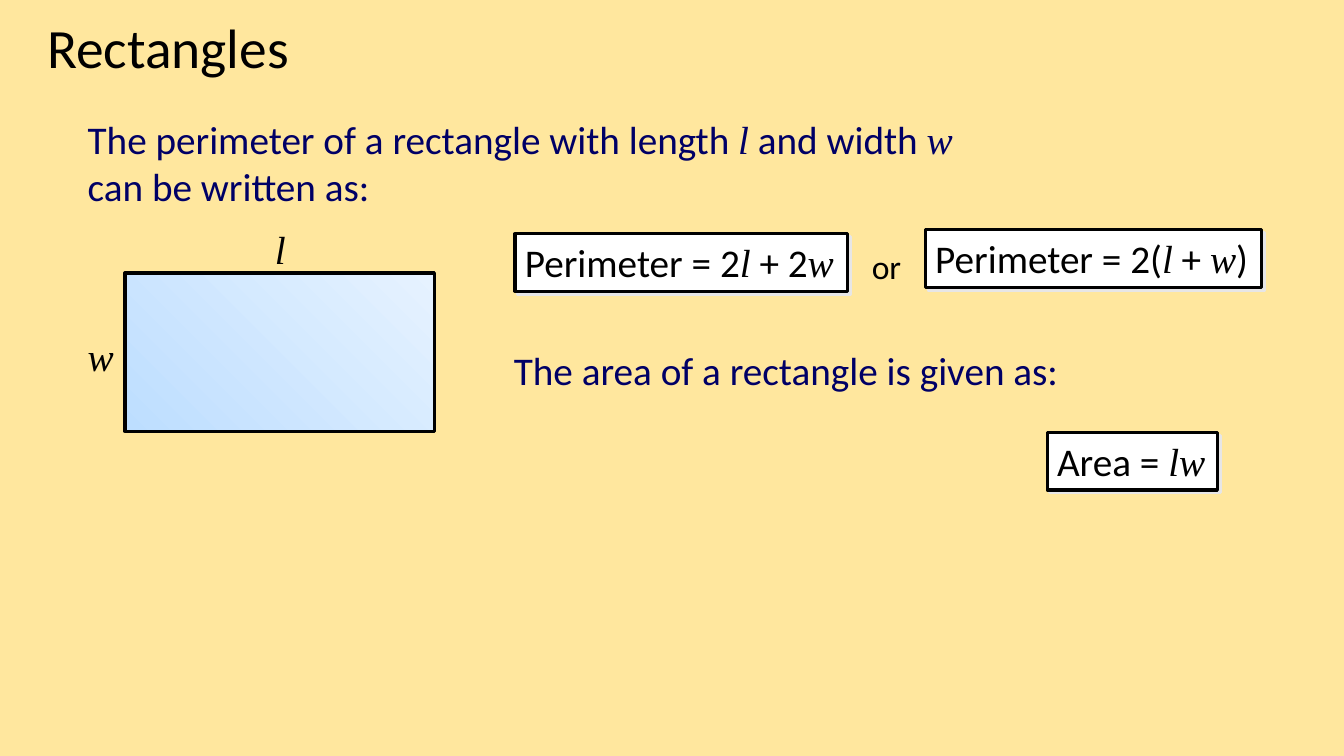
from dataclasses import dataclass

from lxml.etree import SubElement
from pptx import Presentation
from pptx.dml.color import RGBColor
from pptx.enum.shapes import MSO_SHAPE
from pptx.enum.text import MSO_ANCHOR, MSO_AUTO_SIZE, PP_ALIGN
from pptx.oxml.ns import qn
from pptx.util import Cm, Pt


@dataclass(frozen=True)
class Theme:
    background: str = "FFE79E"
    ink: str = "000000"
    statement: str = "000066"
    panel: str = "FFFFFF"
    shadow: str = "E7E6E6"
    gradient: tuple = ("BDDEFF", "E6F2FF")
    font: str = "Calibri"
    math_font: str = "Times New Roman"
    title: float = 39.6
    body: float = 28
    small: float = 24
    outline: float = 2.25


THEME = Theme()
LINE_H = 1.45


def rgb(value):
    return RGBColor.from_string(value)


def write(sp, text, size=THEME.body, color=THEME.ink, wrap=False):
    tf = sp.text_frame
    frame_format = {
        "word_wrap": wrap,
        "auto_size": MSO_AUTO_SIZE.SHAPE_TO_FIT_TEXT,
        "vertical_anchor": MSO_ANCHOR.TOP,
    }
    for name, value in frame_format.items():
        setattr(tf, name, value)
    p = tf.paragraphs[0]
    p.alignment = PP_ALIGN.LEFT
    for i, part in enumerate(text.split("*")):
        if not part:
            continue
        is_math = i % 2 == 1
        r = p.add_run()
        r.text = part
        run_format = {
            "name": THEME.math_font if is_math else THEME.font,
            "size": Pt(size),
            "italic": is_math,
        }
        for name, value in run_format.items():
            setattr(r.font, name, value)
        r.font.color.rgb = rgb(color)
    return tf


def add_label(shapes, box, text, **style):
    sp = shapes.add_textbox(*map(Cm, box))
    return write(sp, text, **style)


def add_outlined(shapes, box):
    sp = shapes.add_shape(MSO_SHAPE.RECTANGLE, *map(Cm, box))
    sp.shadow.inherit = False
    sp.line.color.rgb = rgb(THEME.ink)
    sp.line.width = Pt(THEME.outline)
    return sp


def add_title(s, box, text):
    tf = add_label(s.shapes, box, text, size=THEME.title, wrap=True)
    tf.auto_size = MSO_AUTO_SIZE.NONE
    tf.vertical_anchor = MSO_ANCHOR.MIDDLE
    tf.paragraphs[0].line_spacing = 0.9


def add_statement(s, box, text):
    add_label(s.shapes, box, text, color=THEME.statement, wrap=True)


def add_formula(s, box, text):
    sp = add_outlined(s.shapes, box)
    sp.fill.solid()
    sp.fill.fore_color.rgb = rgb(THEME.panel)
    effects = sp._element.spPr.find(qn("a:effectLst"))
    shadow = SubElement(effects, qn("a:outerShdw"), dist=str(Pt(2.8)),
                        dir="2700000", algn="ctr", rotWithShape="0")
    SubElement(shadow, qn("a:srgbClr"), val=THEME.shadow)
    write(sp, text)


def add_rectangle_figure(s, box):
    left, top, width, height = box
    dx, dy = 1.19, 1.32
    shapes = s.shapes.add_group_shape().shapes
    sp = add_outlined(shapes, (left + dx, top + dy, width - dx, height - dy))
    sp.fill.gradient()
    sp.fill.gradient_angle = 45
    for stop, color, position in zip(sp.fill.gradient_stops, THEME.gradient, (0, 1)):
        stop.color.rgb = rgb(color)
        stop.position = position
    add_label(shapes, (left + 4.72, top, 0.79, LINE_H), "*l*")
    add_label(shapes, (left, top + 2.7, 1.17, LINE_H), "*w*")


def add_perimeter_row(s, box):
    left, top, width, height = box
    right_w = 8.48
    add_formula(s, (left, top + 0.1, 8.38, height), "Perimeter = 2*l* + 2*w*")
    add_label(s.shapes, (left + 8.74, top + 0.28, 1.27, 1.27), "or", size=THEME.small)
    add_formula(s, (left + width - right_w, top, right_w, height),
                "Perimeter = 2(*l* + *w*)")


def main():
    prs = Presentation()
    prs.slide_width, prs.slide_height = Cm(33.87), Cm(19.05)
    s = prs.slides.add_slide(prs.slide_layouts[6])
    s.background.fill.solid()
    s.background.fill.fore_color.rgb = rgb(THEME.background)

    add_statement(s, (1.96, 2.77, 22.53, 2.64),
                  "The perimeter of a rectangle with length *l* and width *w* can be written as:")
    add_title(s, (0.94, 0.41, 20.42, 1.75), "Rectangles")
    add_rectangle_figure(s, (1.96, 5.56, 8.99, 5.31))
    add_perimeter_row(s, (12.98, 5.79, 18.82, LINE_H))
    add_statement(s, (12.7, 8.59, 22.53, LINE_H), "The area of a rectangle is given as:")
    add_formula(s, (26.39, 10.9, 4.29, LINE_H), "Area = *lw*")
    prs.save("out.pptx")


if __name__ == "__main__":
    main()
